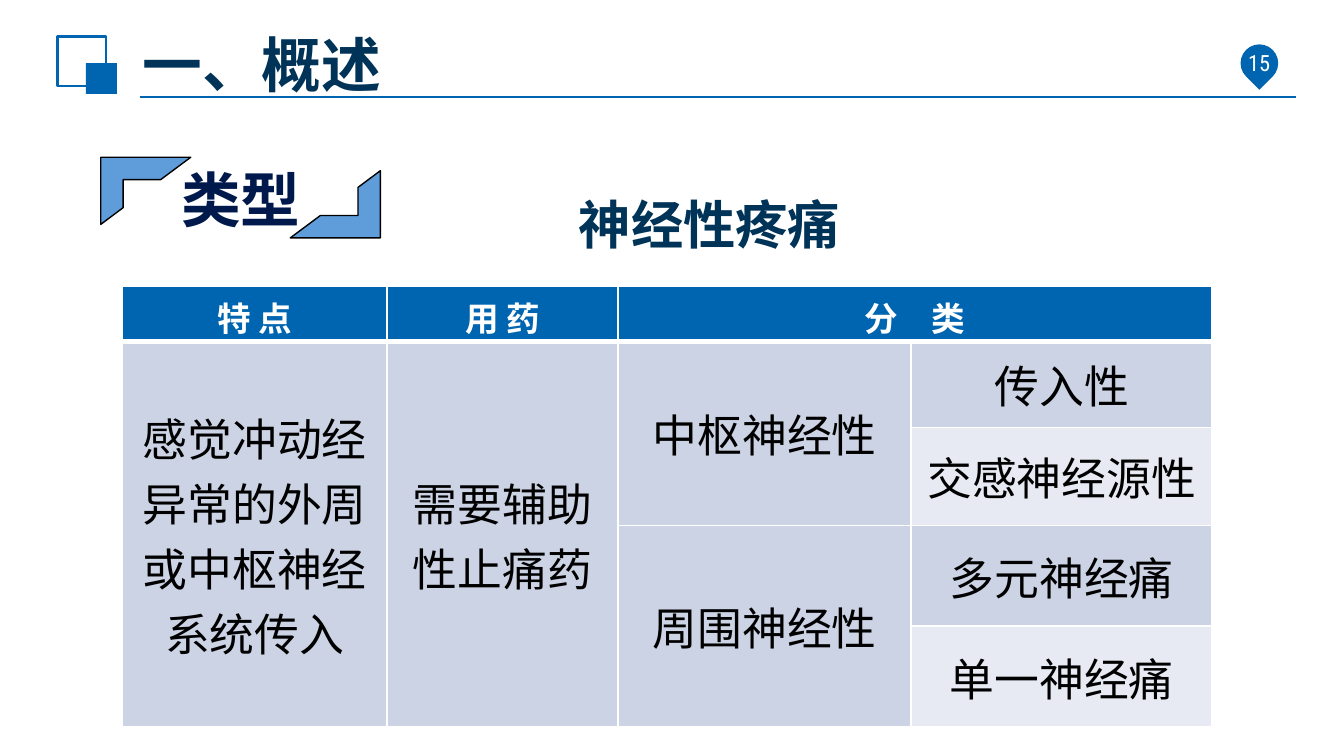
from lxml import etree
from pptx import Presentation
from pptx.dml.color import RGBColor
from pptx.enum.shapes import MSO_CONNECTOR, MSO_SHAPE
from pptx.enum.text import MSO_ANCHOR, PP_ALIGN
from pptx.oxml.ns import qn
from pptx.util import Inches, Pt

COLORS = {
    "blue": "0065B0",
    "frame": "5E9CDA",
    "title": "003358",
    "label": "00194C",
    "band_dark": "CCD3E4",
    "band_light": "E7EAF2",
    "white": "FFFFFF",
    "black": "000000",
}
CJK_FONT = "Noto Sans CJK SC"
COLUMNS = [1.97, 1.72, 2.18, 2.24]
ROWS = [0.41, 0.64, 0.73, 0.75, 0.75]
HEADERS = ["特 点", "用 药", "分　类"]
# (row, column, rows spanned, text)
BODY = [
    (1, 0, 4, "感觉冲动经异常的外周或中枢神经系统传入"),
    (1, 1, 4, "需要辅助性止痛药"),
    (1, 2, 2, "中枢神经性"),
    (3, 2, 2, "周围神经性"),
    (1, 3, 1, "传入性"),
    (2, 3, 1, "交感神经源性"),
    (3, 3, 1, "多元神经痛"),
    (4, 3, 1, "单一神经痛"),
]


def rgb(name):
    return RGBColor.from_string(COLORS[name])


def set_text(tf, text, size, color, bold=False, font="Arial", align=PP_ALIGN.LEFT):
    tf.text = text
    p = tf.paragraphs[0]
    p.alignment = align
    r = p.runs[0]
    r.font.size = Pt(size)
    r.font.bold = bold
    r.font.name = font
    r.font.color.rgb = rgb(color)
    ea = etree.SubElement(r._r.get_or_add_rPr(), qn("a:ea"))
    ea.set("typeface", CJK_FONT)


def add_shape(slide, kind, box, fill=None, line=None, width=0.75, rotation=0):
    sp = slide.shapes.add_shape(kind, *map(Inches, box))
    sp.shadow.inherit = False
    sp.rotation = rotation
    if fill:
        sp.fill.solid()
        sp.fill.fore_color.rgb = rgb(fill)
    else:
        sp.fill.background()
    if line:
        sp.line.color.rgb = rgb(line)
        sp.line.width = Pt(width)
    else:
        sp.line.fill.background()


def add_label(slide, box, text, size, color, **style):
    sp = slide.shapes.add_textbox(*map(Inches, box))
    tf = sp.text_frame
    tf.word_wrap = True
    tf.vertical_anchor = MSO_ANCHOR.MIDDLE
    set_text(tf, text, size, color, **style)


def add_rule(slide, x1, x2, y):
    line = slide.shapes.add_connector(
        MSO_CONNECTOR.STRAIGHT, Inches(x1), Inches(y), Inches(x2), Inches(y))
    line.line.color.rgb = rgb("blue")
    line.line.width = Pt(1.25)
    etree.SubElement(line._element.spPr, qn("a:effectLst"))


def add_header(slide):
    add_rule(slide, 1.04, 9.64, 0.72)
    add_shape(slide, MSO_SHAPE.RECTANGLE, (0.43, 0.27, 0.36, 0.37), line="blue", width=1.5)
    add_shape(slide, MSO_SHAPE.RECTANGLE, (0.64, 0.47, 0.23, 0.23), fill="blue")
    add_shape(slide, MSO_SHAPE.TEAR, (9.23, 0.33, 0.28, 0.28), fill="blue", rotation=135)
    add_label(slide, (8.7, 0.3, 1.34, 0.33), "15", 12, "white",
              font="Roboto Condensed", align=PP_ALIGN.CENTER)

    title = slide.shapes.title
    title.left, title.top, title.width, title.height = map(Inches, (0.99, 0.29, 6.45, 0.36))
    tf = title.text_frame
    tf.margin_left = tf.margin_right = Inches(0.07)
    tf.margin_top = tf.margin_bottom = Inches(0.04)
    tf.vertical_anchor = MSO_ANCHOR.MIDDLE
    set_text(tf, "一、概述", 32, "title", bold=True)


def add_framed_label(slide):
    for x, y, rotation in ((0.75, 1.17, 0), (2.16, 1.27, 180)):
        add_shape(slide, MSO_SHAPE.HALF_FRAME, (x, y, 0.67, 0.5),
                  fill="frame", line="black", rotation=rotation)
    add_label(slide, (1.25, 1.16, 1.25, 0.64), "类型", 32, "label", bold=True, font=CJK_FONT)


def style_cell(cell, color, bottom=1):
    """Set white borders and a fill; borders must come first in the cell's XML."""
    tcPr = cell._tc.get_or_add_tcPr()
    for side, width in (("L", 1), ("R", 1), ("T", 1), ("B", bottom)):
        ln = etree.SubElement(tcPr, qn(f"a:ln{side}"), w=str(Pt(width)))
        fill = etree.SubElement(ln, qn("a:solidFill"))
        etree.SubElement(fill, qn("a:srgbClr"), val=COLORS["white"])
    cell.fill.solid()
    cell.fill.fore_color.rgb = rgb(color)


def add_pain_table(slide):
    table = slide.shapes.add_table(
        len(ROWS), len(COLUMNS), Inches(0.91), Inches(2.13),
        Inches(sum(COLUMNS)), Inches(sum(ROWS))).table
    for column, width in zip(table.columns, COLUMNS):
        column.width = Inches(width)
    for i, (row, height) in enumerate(zip(table.rows, ROWS)):
        row.height = Inches(height)
        for cell in row.cells:
            if i == 0:
                style_cell(cell, "blue", bottom=3)
            else:
                style_cell(cell, "band_dark" if i % 2 else "band_light")
    for cell in table.rows[1].cells:
        cell._tc.tcPr.find(qn("a:lnT")).set("w", str(Pt(3)))

    table.cell(0, 2).merge(table.cell(0, 3))
    for col, text in enumerate(HEADERS):
        set_text(table.cell(0, col).text_frame, text, 18, "white",
                 bold=True, align=PP_ALIGN.CENTER)
    for row, col, span, text in BODY:
        cell = table.cell(row, col)
        if span > 1:
            cell.merge(table.cell(row + span - 1, col))
        cell.vertical_anchor = MSO_ANCHOR.MIDDLE
        set_text(cell.text_frame, text, 24, "black", align=PP_ALIGN.CENTER)


def main():
    prs = Presentation()
    prs.slide_width = Inches(10)
    prs.slide_height = prs.slide_width * 9 // 16
    slide = prs.slides.add_slide(prs.slide_layouts[5])
    add_header(slide)
    add_framed_label(slide)
    add_label(slide, (4.21, 1.38, 2.36, 0.57), "神经性疼痛", 28, "title", bold=True)
    add_pain_table(slide)
    prs.save("out.pptx")


if __name__ == "__main__":
    main()
